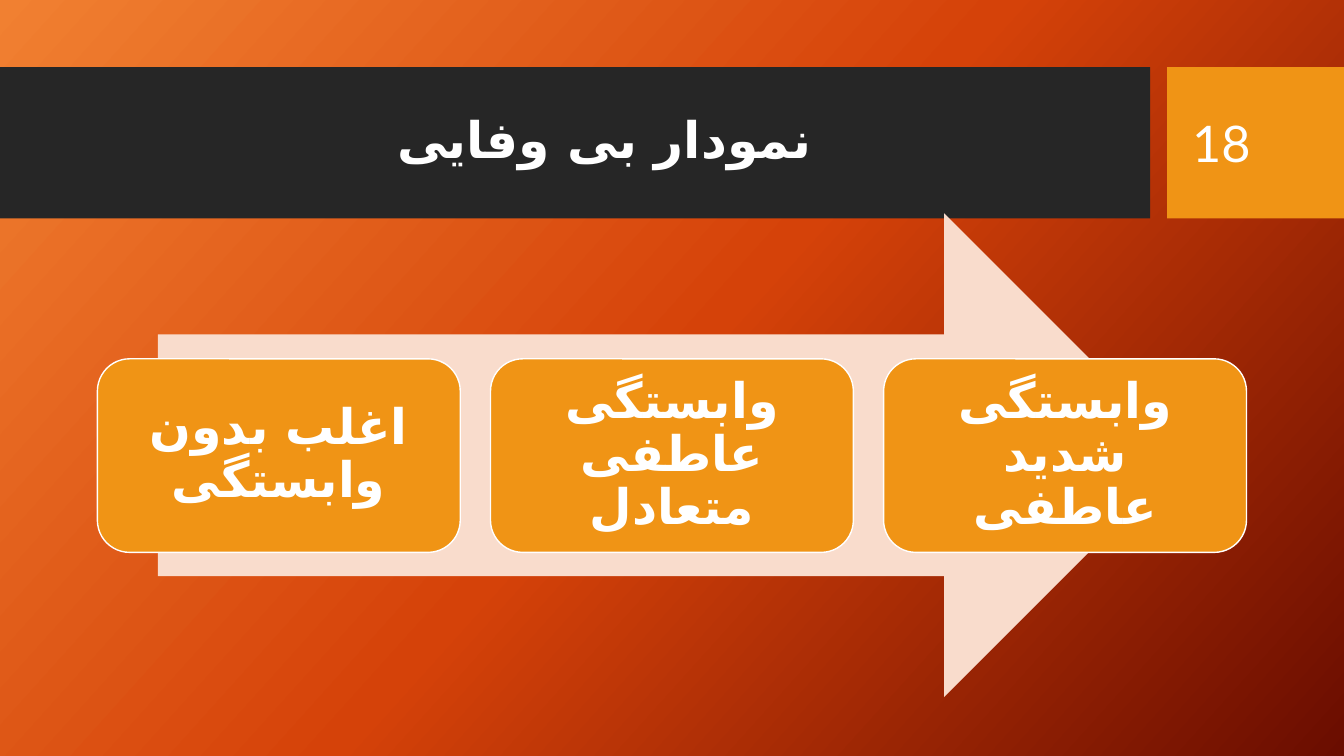
"""Build the infidelity diagram slide: title band, page number and three steps on an arrow."""
from copy import deepcopy
from dataclasses import dataclass

from lxml import etree
from pptx import Presentation
from pptx import util as u
from pptx.dml.color import RGBColor
from pptx.enum import shapes, text
from pptx.oxml import ns

COLUMN, ROW = u.Inches(1 / 3), u.Inches(1 / 6)
COLUMNS, ROWS = 40, 45

WHITE = RGBColor(0xFF, 0xFF, 0xFF)
CHARCOAL = RGBColor(0x26, 0x26, 0x26)
AMBER = RGBColor(0xF0, 0x94, 0x15)
PEACH = RGBColor(0xF9, 0xDC, 0xCC)
BACKDROP = [
    (0, RGBColor(0xF1, 0x80, 0x31)),
    (0.5, RGBColor(0xD5, 0x42, 0x09)),
    (1, RGBColor(0x6A, 0x0D, 0x00)),
]
BACKDROP_ANGLE = 360 - 42

FONT = "Lato"
PERSIAN_FONT = "DejaVu Sans"
STEPS = ["اغلب بدون وابستگی", "وابستگی عاطفی متعادل", "وابستگی شدید عاطفی"]
STEP_LEFT, STEP_PITCH = 2.9, 11.7
STEP_INSET = u.Inches(0.15)


@dataclass(frozen=True)
class Area:
    left: float
    top: float
    width: float
    height: float

    def lengths(self) -> tuple:
        return (u.Emu(round(self.left * COLUMN)), u.Emu(round(self.top * ROW)),
                u.Emu(round(self.width * COLUMN)), u.Emu(round(self.height * ROW)))


@dataclass(frozen=True)
class Block:
    kind: shapes.MSO_SHAPE
    area: Area
    fill: RGBColor
    outlined: bool = False


@dataclass(frozen=True)
class Label:
    wording: str
    size: int
    bold: bool = True
    align: text.PP_ALIGN = text.PP_ALIGN.CENTER
    spacing: float = 0.9
    right_to_left: bool = False


BLOCKS = [
    Block(shapes.MSO_SHAPE.RECTANGLE, Area(0, 4, 34.23, 9), CHARCOAL),
    Block(shapes.MSO_SHAPE.RECTANGLE, Area(34.74, 4, 5.26, 9), AMBER),
    Block(shapes.MSO_SHAPE.RIGHT_ARROW, Area(4.7, 12.7, 30.6, 28.8), PEACH),
]
CAPTIONS = [
    (Area(2.22, 4.92, 31.53, 7.08), Label("نمودار بی وفایی", 36)),
    (Area(35.19, 4.92, 3.78, 7.14),
     Label("18", 36, bold=False, align=text.PP_ALIGN.LEFT, spacing=1)),
]


def apply(target, formats: dict) -> None:
    for name, value in formats.items():
        setattr(target, name, value)


def paint_background(page) -> None:
    fill = page.background.fill
    fill.gradient()
    fill.gradient_angle = BACKDROP_ANGLE
    stops = page.element.find(".//" + ns.qn("a:gsLst"))
    stops.append(deepcopy(stops[-1]))
    for stop, (position, color) in zip(fill.gradient_stops, BACKDROP):
        stop.position = position
        stop.color.rgb = color


def draw_block(page, block: Block):
    shape = page.shapes.add_shape(block.kind, *block.area.lengths())
    shape.shadow.inherit = False
    shape.fill.solid()
    shape.fill.fore_color.rgb = block.fill
    if block.outlined:
        shape.line.color.rgb = WHITE
        shape.line.width = u.Pt(1)
    else:
        shape.line.fill.background()
    return shape


def write_label(box, label: Label) -> None:
    apply(box.text_frame, {"word_wrap": True, "vertical_anchor": text.MSO_ANCHOR.MIDDLE})
    para = box.text_frame.paragraphs[0]
    apply(para, {"alignment": label.align, "line_spacing": label.spacing})
    if label.right_to_left:
        para._p.get_or_add_pPr().set("rtl", "1")
    span = para.add_run()
    span.text = label.wording
    apply(span.font, {"name": FONT, "size": u.Pt(label.size), "bold": label.bold})
    span.font.color.rgb = WHITE
    etree.SubElement(span.font._element, ns.qn("a:cs"), typeface=PERSIAN_FONT)


def draw_step(page, index: int, wording: str) -> None:
    area = Area(STEP_LEFT + index * STEP_PITCH, 21.36, 10.8, 11.52)
    box = draw_block(page, Block(shapes.MSO_SHAPE.ROUNDED_RECTANGLE, area, AMBER, outlined=True))
    sides = ("margin_left", "margin_top", "margin_right", "margin_bottom")
    apply(box.text_frame, dict.fromkeys(sides, STEP_INSET))
    write_label(box, Label(wording, 35, right_to_left=True))


def main() -> None:
    deck = Presentation()
    apply(deck, {"slide_width": COLUMNS * COLUMN, "slide_height": ROWS * ROW})
    page = deck.slides.add_slide(deck.slide_layouts[6])
    paint_background(page)
    for block in BLOCKS:
        draw_block(page, block)
    for area, label in CAPTIONS:
        write_label(page.shapes.add_textbox(*area.lengths()), label)
    for index, wording in enumerate(STEPS):
        draw_step(page, index, wording)
    deck.save("out.pptx")


if __name__ == "__main__":
    main()
